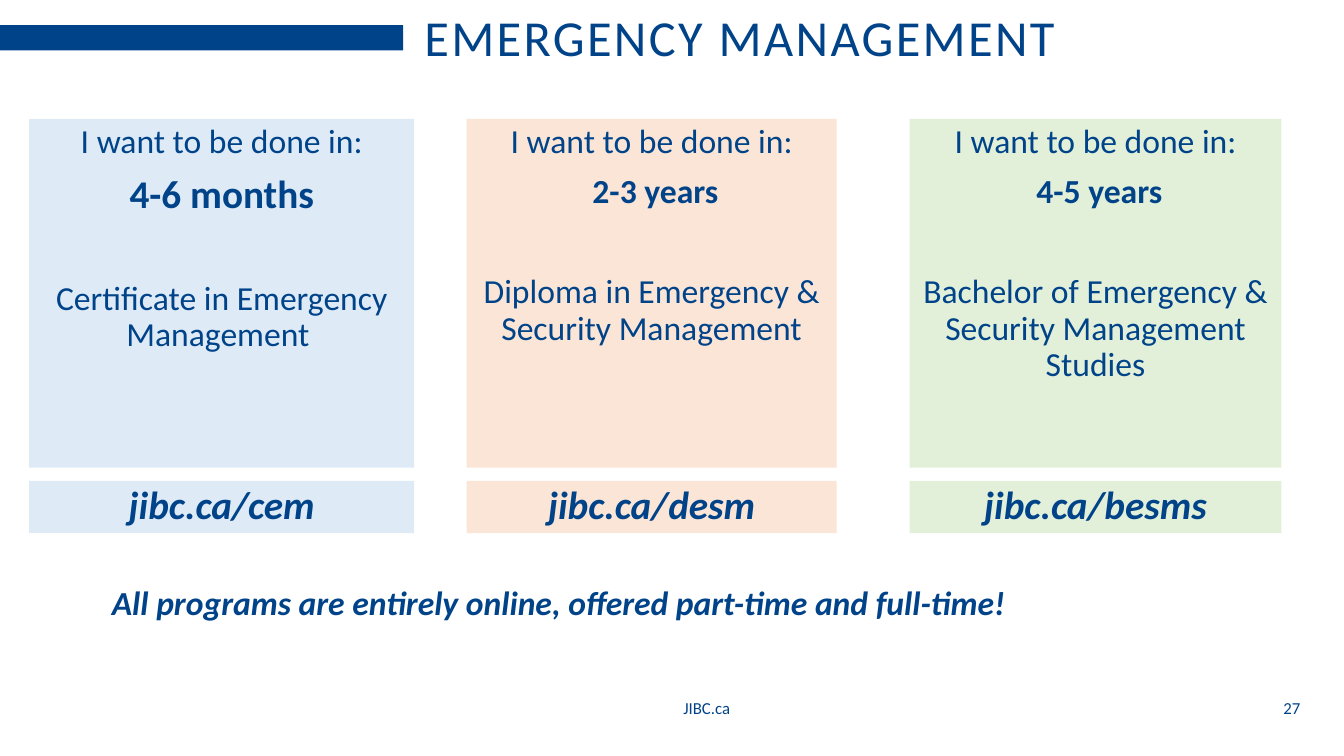
"""Builds the Emergency Management programme comparison slide."""
from lxml import etree
from pptx import Presentation
from pptx import util as u
from pptx.dml import color
from pptx.enum import shapes, text
from pptx.oxml import ns

WIDTH, HEIGHT = u.Inches(13.33), u.Inches(7.5)
COLUMNS, ROWS = 40, 30
NAVY = "004389"
CENTER, LEFT, RIGHT = text.PP_ALIGN.CENTER, text.PP_ALIGN.LEFT, text.PP_ALIGN.RIGHT
CARD_TOP, CARD_ROWS = 4.72, 13.84
LINK_TOP, LINK_ROWS = 19.08, 2.08
FOOTER_TOP, FOOTER_ROWS = 27.6, 1.6

PROGRAMS = [
    (0.87, 11.46, "DEEBF7", "4-6 months", 28,
     "Certificate in Emergency Management ", "jibc.ca/cem"),
    (13.89, 11.01, "FBE5D6", " 2-3 years", 24,
     "Diploma in Emergency & Security Management", "jibc.ca/desm"),
    (27.07, 11.07, "E2F0D9", " 4-5 years", 24,
     "Bachelor of Emergency & Security Management Studies", "jibc.ca/besms"),
]


def rgb(hex_code):
    """Turn a hex string into a colour."""
    return color.RGBColor.from_string(hex_code)


def area(column, row, columns, rows):
    """Convert grid units to left, top, width and height."""
    across, down = WIDTH / COLUMNS, HEIGHT / ROWS
    return [round(v) for v in (column * across, row * down, columns * across, rows * down)]


def assign(target, values):
    """Set every attribute named in a dict of format values."""
    for name, value in values.items():
        setattr(target, name, value)


def paint(part, hex_code):
    """Give a shape a solid fill."""
    part.fill.solid()
    part.fill.fore_color.rgb = rgb(hex_code)


def place(part, spot):
    """Move a placeholder to a grid area."""
    assign(part, dict(zip(("left", "top", "width", "height"), area(*spot))))


def write(part, lines, align=LEFT):
    """Write lines of (wording, space before, font values) without bullets."""
    frame = part.text_frame
    assign(frame, {"word_wrap": True, "auto_size": text.MSO_AUTO_SIZE.NONE,
                   "vertical_anchor": text.MSO_ANCHOR.TOP})
    for index, (wording, gap, style) in enumerate(lines):
        line = frame.add_paragraph() if index else frame.paragraphs[0]
        assign(line, {"alignment": align, "line_spacing": 0.9, "space_before": u.Pt(gap)})
        properties = line._p.get_or_add_pPr()
        properties.set("marL", "0")
        properties.set("indent", "0")
        etree.SubElement(properties, ns.qn("a:buNone"))
        run = line.add_run()
        run.text = wording
        assign(run.font, {"name": "Calibri", "bold": False, "italic": False, **style})
        run.font.color.rgb = rgb(NAVY)


def add_label(slide, spot, wording, style, align=LEFT):
    """Add a one-line text box on the grid."""
    label = slide.shapes.add_textbox(*area(*spot))
    write(label, [(wording, 0, style)], align)
    return label


def add_bar(slide):
    """Add the navy bar to the left of the heading."""
    bar = slide.shapes.add_shape(shapes.MSO_SHAPE.RECTANGLE, *area(0, 1, 12, 1))
    bar.shadow.inherit = False
    bar.line.fill.background()
    paint(bar, NAVY)


def add_program(slide, card, program):
    """Fill a programme card and add its link strip."""
    column, columns, tint, duration, size, award, link = program
    place(card, (column, CARD_TOP, columns, CARD_ROWS))
    paint(card, tint)
    write(card, [("I want to be done in:", 0, {"size": u.Pt(24)}),
                 (duration, 10, {"size": u.Pt(size), "bold": True}),
                 (award, 46, {"size": u.Pt(24)})], CENTER)
    strip = add_label(slide, (column, LINK_TOP, columns, LINK_ROWS), link,
                      {"size": u.Pt(28), "bold": True, "italic": True}, CENTER)
    paint(strip, tint)


def main():
    """Build and save the slide."""
    deck = Presentation()
    assign(deck, {"slide_width": WIDTH, "slide_height": HEIGHT})
    slide = deck.slides.add_slide(deck.slide_layouts.get_by_name("Comparison"))
    heading, *cards, note = slide.placeholders

    add_bar(slide)
    place(heading, (12.33, 0.32, 26.67, 5))
    write(heading, [("EMERGENCY MANAGEMENT", 0, {"size": u.Pt(36)})])
    heading.text_frame.paragraphs[0].runs[0].font._element.set("spc", "170")

    for card, program in zip(cards, PROGRAMS):
        add_program(slide, card, program)

    place(note, (3.03, 23.08, 34.23, 2.56))
    write(note, [("All programs are entirely online, offered part-time and full-time!", 0,
                  {"size": u.Pt(24), "bold": True, "italic": True})])

    small = {"size": u.Pt(12)}
    add_label(slide, (20.04, FOOTER_TOP, 2.4, FOOTER_ROWS), "JIBC.ca", small)
    add_label(slide, (31.44, FOOTER_TOP, 7.56, FOOTER_ROWS), "27", small, RIGHT)
    deck.save("out.pptx")


if __name__ == "__main__":
    main()
